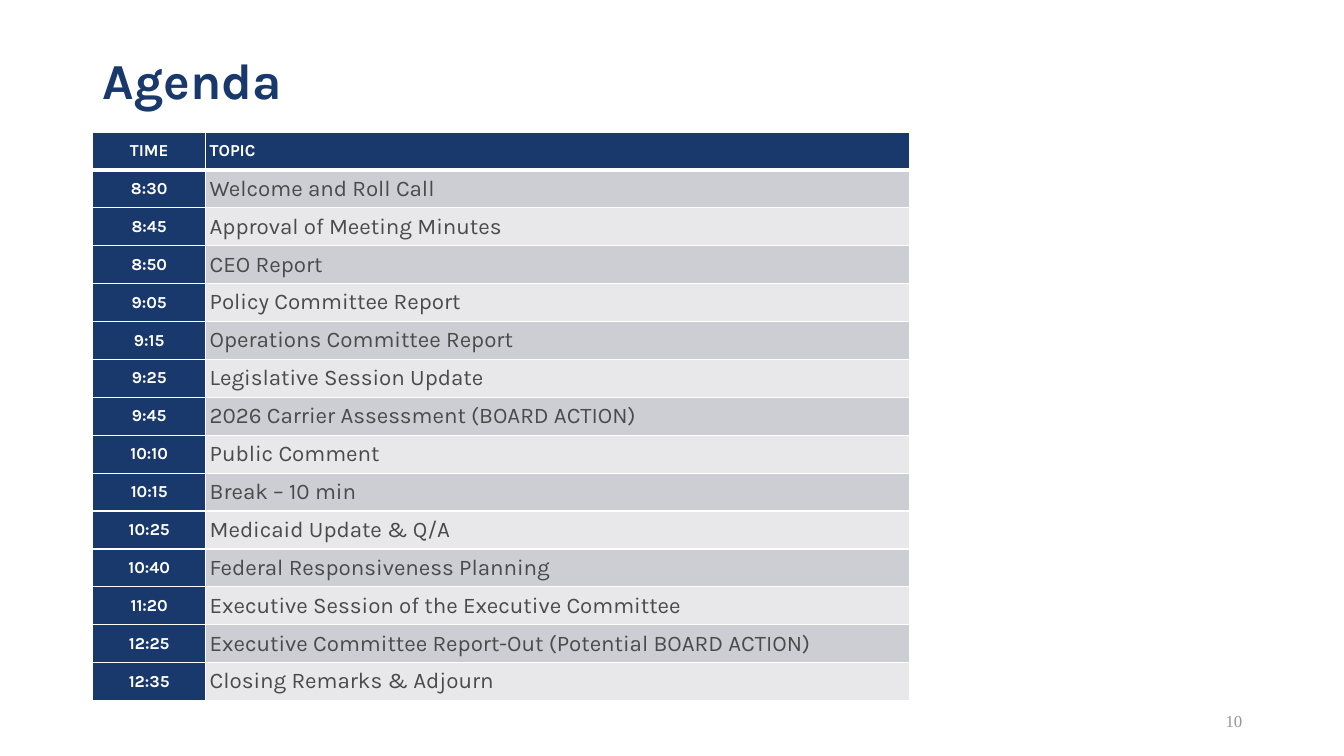
from dataclasses import dataclass
from lxml.etree import SubElement
from pptx import Presentation
from pptx.dml.color import RGBColor
from pptx.enum.text import MSO_ANCHOR, MSO_AUTO_SIZE, PP_ALIGN
from pptx.oxml.ns import qn
from pptx.util import Inches, Pt


@dataclass(frozen=True)
class Theme:
    navy: str = "19386B"
    white: str = "FFFFFF"
    ink: str = "4A4A4A"
    dim: str = "969696"
    bands: tuple = ("CCCED4", "E8E8EB")
    face: str = "Karla"
    serif: str = "Times New Roman"
    title: int = 36
    topic: int = 16
    small: int = 12


THEME = Theme()
WIDE, HIGH = 13.33, 7.5

# Layout grid
LEFT, TOP = 0.92, 1.31
COLS = (1.12, 6.98)
ROW = 0.376

AGENDA = (
    ("TIME", "TOPIC"),
    ("8:30", "Welcome and Roll Call"),
    ("8:45", "Approval of Meeting Minutes"),
    ("8:50", "CEO Report"),
    ("9:05", "Policy Committee Report"),
    ("9:15", "Operations Committee Report"),
    ("9:25", "Legislative Session Update"),
    ("9:45", "2026 Carrier Assessment (BOARD ACTION)"),
    ("10:10", "Public Comment"),
    ("10:15", "Break – 10 min"),
    ("10:25", "Medicaid Update & Q/A"),
    ("10:40", "Federal Responsiveness Planning"),
    ("11:20", "Executive Session of the Executive Committee"),
    ("12:25", "Executive Committee Report-Out (Potential BOARD ACTION)"),
    ("12:35", "Closing Remarks & Adjourn"),
)


def write(frame, text, size, color, bold=False, face=THEME.face,
          align=PP_ALIGN.LEFT):
    frame.text = text
    line = frame.paragraphs[0]
    line.alignment = align
    font = line.font
    font.name, font.size, font.bold = face, Pt(size), bold
    font.color.rgb = RGBColor.from_string(color)
    return line


def edge(cell, widths):
    """Draw white borders in the order left, right, top, bottom."""
    props = cell._tc.get_or_add_tcPr()
    for side, width in zip("LRTB", widths):
        line = SubElement(props, qn(f"a:ln{side}"), w=str(Pt(width)))
        fill = SubElement(line, qn("a:solidFill"))
        SubElement(fill, qn("a:srgbClr"), val=THEME.white)


def add_title(slide, text):
    title = slide.shapes.title
    title.left, title.top = Inches(LEFT), Inches(0.4)
    title.width, title.height = Inches(11.5), Inches(0.86)
    frame = title.text_frame
    frame.auto_size = MSO_AUTO_SIZE.NONE
    frame.vertical_anchor = MSO_ANCHOR.MIDDLE
    line = write(frame, text, THEME.title, THEME.navy, True)
    line.line_spacing = 0.9


def fill_cell(cell, text, row, col):
    head = row == 0
    dark = head or col == 0
    top = 3 if row == 1 else 1
    edge(cell, (1, 1, top, 3 if head else 1))
    cell.fill.solid()
    shade = THEME.navy if dark else THEME.bands[(row - 1) % 2]
    cell.fill.fore_color.rgb = RGBColor.from_string(shade)
    cell.margin_left = cell.margin_right = Inches(0.04)
    cell.margin_top = cell.margin_bottom = 0
    cell.vertical_anchor = MSO_ANCHOR.MIDDLE
    write(cell.text_frame, text,
          THEME.small if dark else THEME.topic,
          THEME.white if dark else THEME.ink, dark,
          align=PP_ALIGN.LEFT if col else PP_ALIGN.CENTER)


def add_agenda(slide, rows):
    table = slide.shapes.add_table(
        len(rows), len(COLS), Inches(LEFT), Inches(TOP),
        Inches(sum(COLS)), Inches(ROW * len(rows))).table
    table.horz_banding = False
    table.first_col = True
    for col, width in zip(table.columns, COLS):
        col.width = Inches(width)
    for r, texts in enumerate(rows):
        table.rows[r].height = Inches(ROW)
        for c, text in enumerate(texts):
            fill_cell(table.cell(r, c), text, r, c)


def add_page(slide, text):
    box = slide.shapes.add_textbox(
        Inches(9.42), Inches(6.95), Inches(3), Inches(0.4))
    frame = box.text_frame
    frame.word_wrap = True
    frame.vertical_anchor = MSO_ANCHOR.MIDDLE
    write(frame, text, THEME.small, THEME.dim, face=THEME.serif,
          align=PP_ALIGN.RIGHT)


def main():
    deck = Presentation()
    deck.slide_width, deck.slide_height = Inches(WIDE), Inches(HIGH)
    slide = deck.slides.add_slide(deck.slide_layouts[5])
    add_title(slide, "Agenda")
    add_page(slide, "10")
    add_agenda(slide, AGENDA)
    deck.save("out.pptx")


if __name__ == "__main__":
    main()
